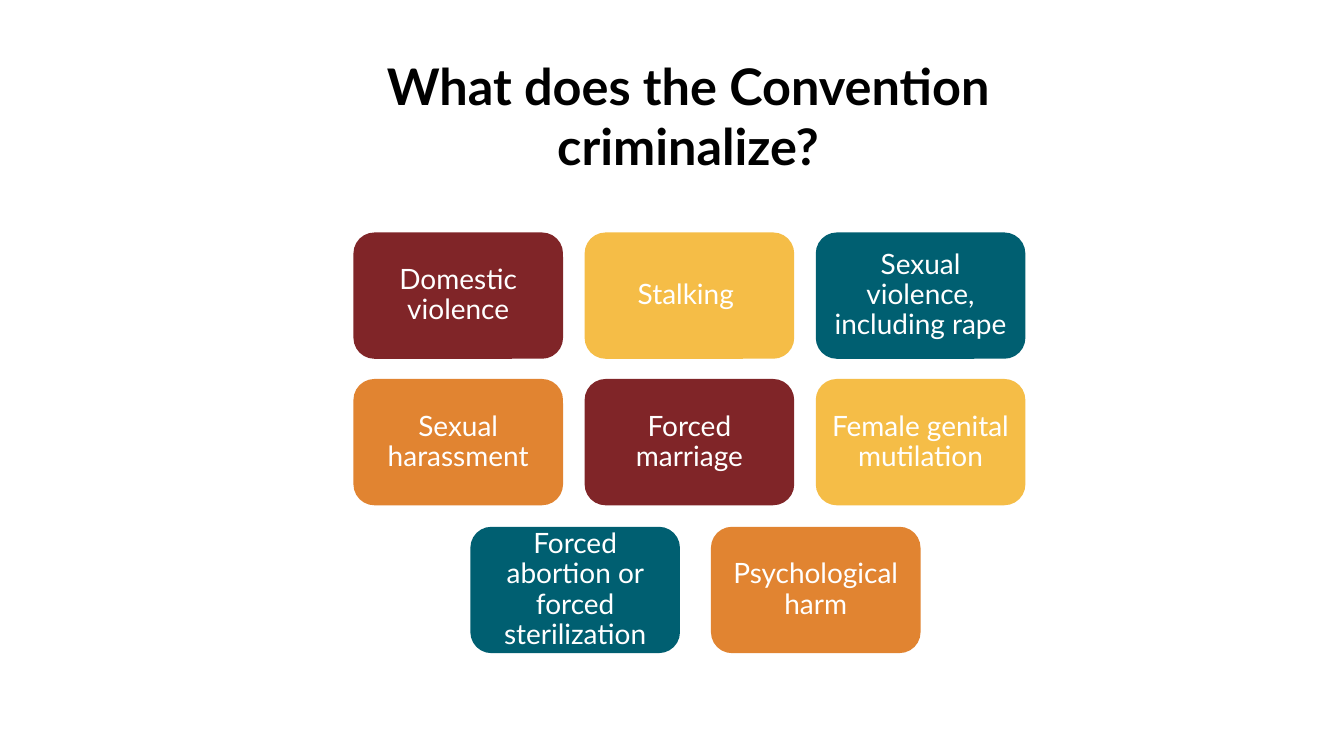
from pptx import Presentation
from pptx import util as u
from pptx.dml import color
from pptx.enum import shapes, text

WIDE, HIGH = 1.56, 0.94
HUES = ["802528", "F5BD47", "005F71", "E18431"]
ROWS = [
    (2.63, 1.73, 1.72, ["Domestic violence", "Stalking ", "Sexual violence, including rape"]),
    (2.63, 2.82, 1.72, ["Sexual harassment", "Forced marriage", "Female genital mutilation"]),
    (3.5, 3.92, 1.79, ["Forced abortion or forced sterilization", "Psychological harm"]),
]


def paint(part, hue):
    part.rgb = color.RGBColor.from_string(hue)


def write(shape, words, size, hue, bold=False, inset=0.06, lead=0.9):
    frame = shape.text_frame
    frame.text = words
    frame.word_wrap = True
    frame.vertical_anchor = text.MSO_ANCHOR.MIDDLE
    frame.margin_left = frame.margin_right = u.Inches(inset)
    frame.margin_top = frame.margin_bottom = u.Inches(0.06)
    para = frame.paragraphs[0]
    para.alignment = text.PP_ALIGN.CENTER
    para.line_spacing = lead
    font = para.runs[0].font
    font.name, font.size, font.bold = "Lato", u.Pt(size), bold
    paint(font.color, hue)


def title(slide, words):
    box = slide.shapes.add_textbox(*map(u.Inches, (1.87, 0.23, 6.5, 1.26)))
    write(box, words, 27, "000000", bold=True, inset=0.1, lead=1.0)


def card(slide, left, top, words, hue):
    shape = slide.shapes.add_shape(
        shapes.MSO_SHAPE.ROUNDED_RECTANGLE, *map(u.Inches, (left, top, WIDE, HIGH))
    )
    shape.shadow.inherit = False
    shape.fill.solid()
    paint(shape.fill.fore_color, hue)
    shape.line.fill.background()
    write(shape, words, 15, "FFFFFF")


def main():
    deck = Presentation()
    deck.slide_width = u.Inches(10)
    deck.slide_height = deck.slide_width * 9 // 16
    slide = deck.slides.add_slide(deck.slide_layouts[6])
    title(slide, "What does the Convention criminalize?")
    for row, (left, top, pitch, names) in enumerate(ROWS):
        for col, name in enumerate(names):
            hue = HUES[(row * 3 + col) % len(HUES)]
            card(slide, left + col * pitch, top, name, hue)
    deck.save("out.pptx")


if __name__ == "__main__":
    main()
